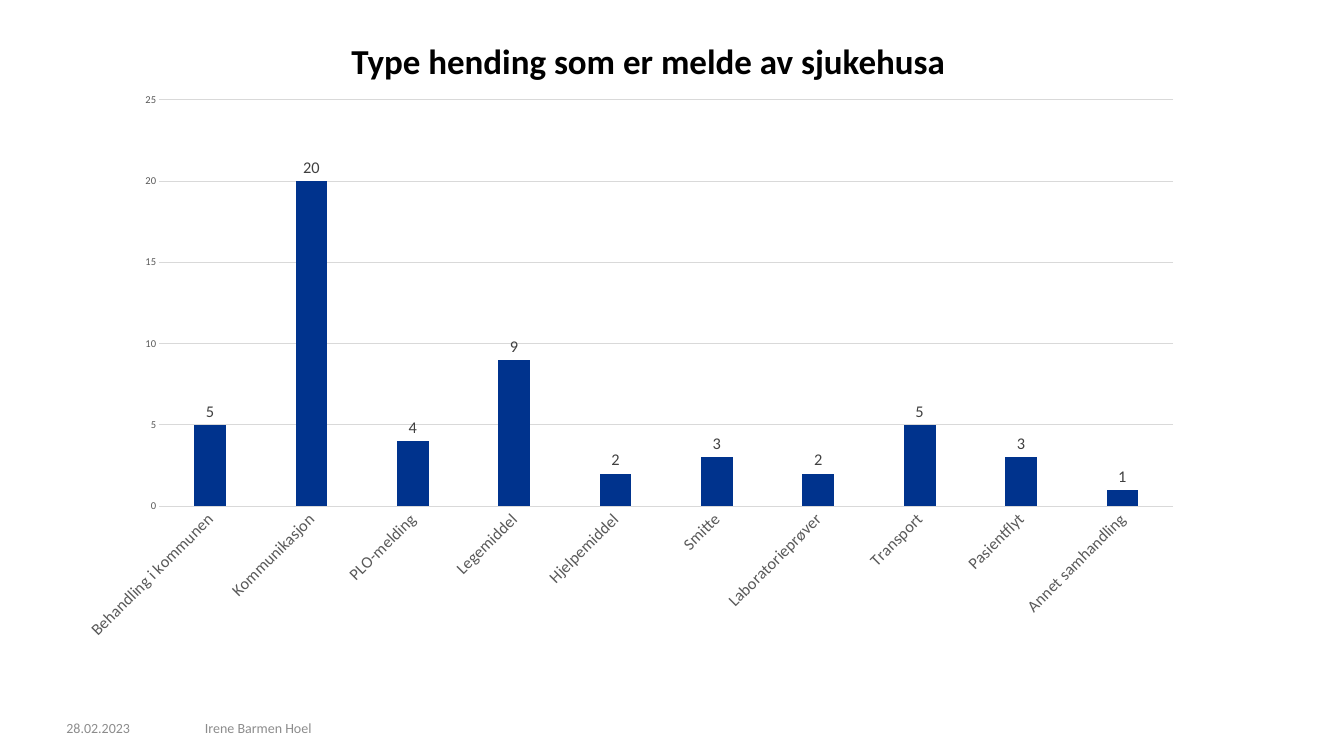
from dataclasses import dataclass

from lxml import etree
from pptx import Presentation
from pptx import util as u
from pptx.chart.data import CategoryChartData
from pptx.dml.color import RGBColor
from pptx.enum import chart as ch
from pptx.enum import text as tx
from pptx.oxml.ns import qn

WIDTH, HEIGHT = 16, 9
FONT = "Calibri"
BLACK, NAVY, PALE = "000000", "00338D", "D9D9D9"
AXIS_GRAY, LABEL_GRAY, FOOTER_GRAY = "595959", "404040", "8C8C8C"
PLOT_SHARES = {"x": 0.083, "y": 0.022, "w": 0.904, "h": 0.668}
EVENTS = {
    "Behandling i kommunen": 5,
    "Kommunikasjon": 20,
    "PLO-melding": 4,
    "Legemiddel": 9,
    "Hjelpemiddel": 2,
    "Smitte": 3,
    "Laboratorieprøver": 2,
    "Transport": 5,
    "Pasientflyt": 3,
    "Annet samhandling": 1,
}


@dataclass(frozen=True)
class Area:
    """A rectangle in inches on the slide."""
    left: float
    top: float
    width: float
    height: float

    def lengths(self) -> list[int]:
        return [u.Inches(n) for n in (self.left, self.top, self.width, self.height)]


MARGIN = 0.79
FOOTER_TOP, FOOTER_HEIGHT = 8.54, 0.24
DATE_AREA = Area(MARGIN, FOOTER_TOP, 1.26, FOOTER_HEIGHT)
AUTHOR_AREA = Area(2.44, FOOTER_TOP, 9.77, FOOTER_HEIGHT)
TITLE_AREA = Area(MARGIN, 0.52, 13.86, 0.51)
CHART_AREA = Area(MARGIN, 1.03, 13.35, 7.24)


def color(value: str) -> RGBColor:
    return RGBColor.from_string(value)


def style_font(font, size: float, shade: str, bold: bool = False) -> None:
    font.name, font.size, font.bold = FONT, u.Pt(size), bold
    font.color.rgb = color(shade)


def add_text(slide, content: str, area: Area, *, size: float, shade: str,
             bold: bool = False, align=tx.PP_ALIGN.LEFT,
             anchor=tx.MSO_ANCHOR.MIDDLE, line_pt: float | None = None) -> None:
    frame = slide.shapes.add_textbox(*area.lengths()).text_frame
    frame.word_wrap = True
    frame.vertical_anchor = anchor
    frame.margin_left = frame.margin_right = frame.margin_top = frame.margin_bottom = 0
    paragraph = frame.paragraphs[0]
    paragraph.alignment = align
    if line_pt:
        paragraph.line_spacing = u.Pt(line_pt)
    run = paragraph.add_run()
    run.text = content
    style_font(run.font, size, shade, bold)


def style_line(line, shade: str) -> None:
    line.color.rgb = color(shade)
    line.width = u.Pt(0.75)


def place_plot(chart) -> None:
    """Fix the inner plot area by shares of the chart's size."""
    plot_area = chart.element.find(".//" + qn("c:plotArea"))
    layout = plot_area.find(qn("c:layout"))
    if layout is None:
        layout = etree.Element(qn("c:layout"))
        plot_area.insert(0, layout)
    manual = etree.SubElement(layout, qn("c:manualLayout"))
    settings = {"layoutTarget": "inner", "xMode": "edge", "yMode": "edge", **PLOT_SHARES}
    for tag, value in settings.items():
        etree.SubElement(manual, qn(f"c:{tag}")).set("val", str(value))


def style_axes(chart) -> None:
    categories, values = chart.category_axis, chart.value_axis
    for axis, size in ((categories, 14), (values, 9)):
        axis.major_tick_mark = axis.minor_tick_mark = ch.XL_TICK_MARK.NONE
        style_font(axis.tick_labels.font, size, AXIS_GRAY)
    style_line(categories.format.line, PALE)
    slant = categories._element.find(qn("c:txPr")).find(qn("a:bodyPr"))
    slant.set("rot", str(-45 * 60000))
    slant.set("vert", "horz")
    values.minimum_scale, values.maximum_scale, values.major_unit = 0, 25, 5
    values.format.line.fill.background()
    style_line(values.major_gridlines.format.line, PALE)


def add_event_chart(slide, area: Area) -> None:
    data = CategoryChartData()
    data.categories = list(EVENTS)
    data.add_series("Series 1", list(EVENTS.values()))
    chart = slide.shapes.add_chart(
        ch.XL_CHART_TYPE.COLUMN_CLUSTERED, *area.lengths(), data).chart
    chart.has_legend = chart.has_title = False
    style_font(chart.font, 10, BLACK)
    place_plot(chart)
    style_axes(chart)

    columns = chart.plots[0]
    columns.gap_width, columns.overlap = 219, -27
    columns.vary_by_categories = False
    events = columns.series[0]
    events.format.fill.solid()
    events.format.fill.fore_color.rgb = color(NAVY)
    labels = events.data_labels
    labels.show_value = True
    labels.position = ch.XL_LABEL_POSITION.OUTSIDE_END
    style_font(labels.font, 14, LABEL_GRAY)


def main() -> None:
    deck = Presentation()
    deck.slide_width, deck.slide_height = u.Inches(WIDTH), u.Inches(HEIGHT)
    slide = deck.slides.add_slide(deck.slide_layouts[6])
    for content, area in (("28.02.2023", DATE_AREA), ("Irene Barmen Hoel", AUTHOR_AREA)):
        add_text(slide, content, area, size=12, shade=FOOTER_GRAY)
    add_text(slide, "Type hending som er melde av sjukehusa", TITLE_AREA,
             size=30, shade=BLACK, bold=True, align=tx.PP_ALIGN.CENTER,
             anchor=tx.MSO_ANCHOR.TOP, line_pt=32)
    add_event_chart(slide, CHART_AREA)
    deck.save("out.pptx")


if __name__ == "__main__":
    main()
